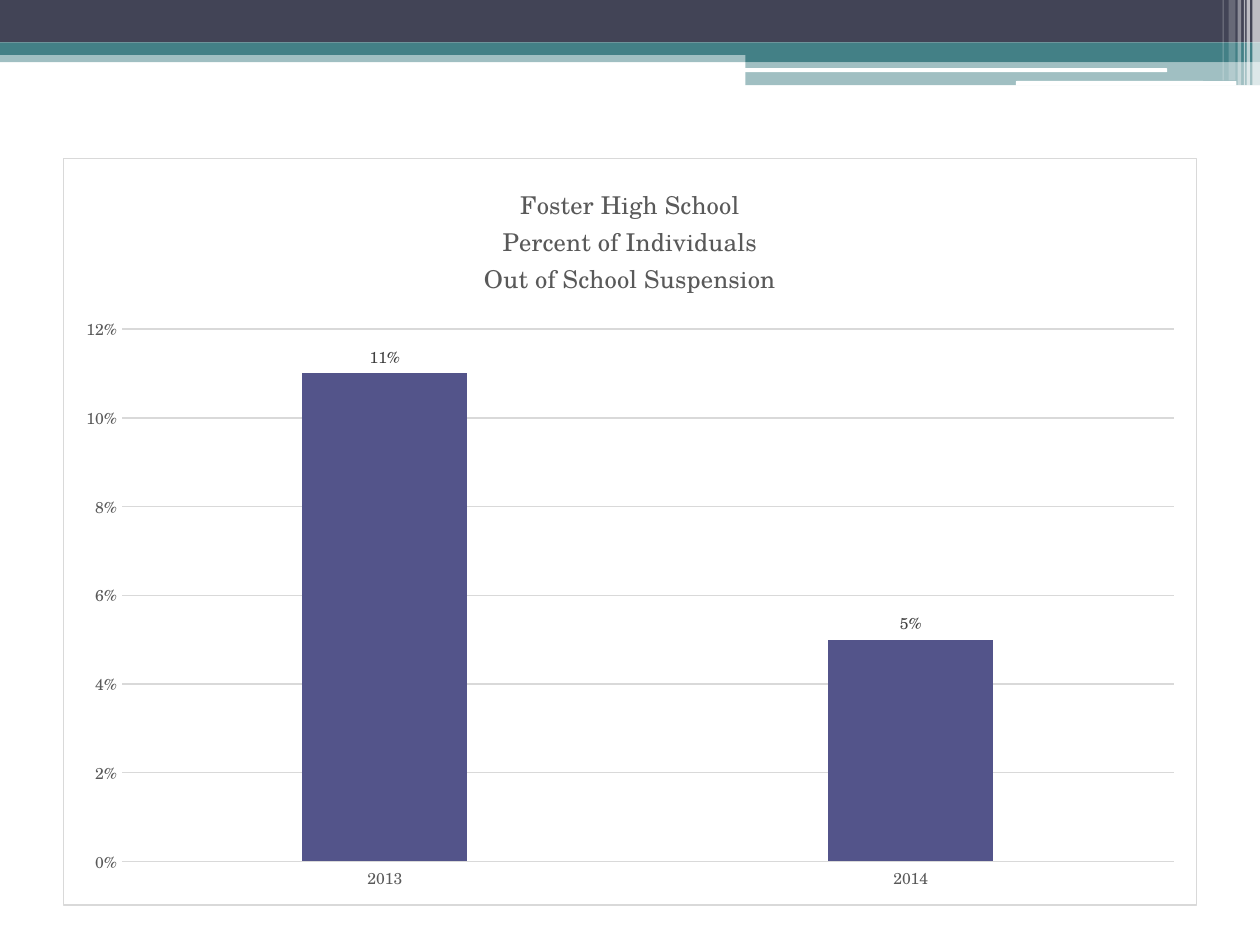
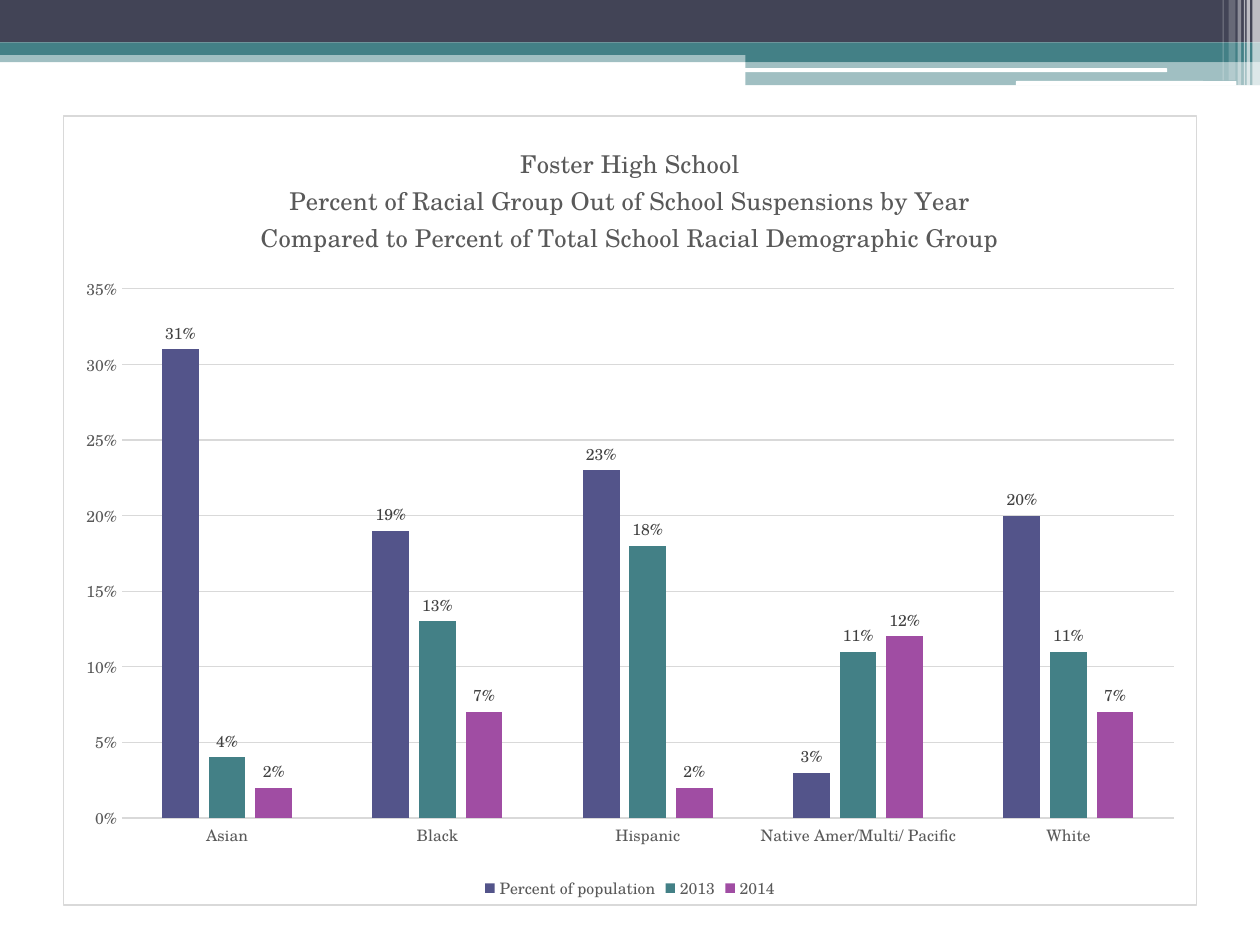
import pptx
import pptx.chart.data
import pptx.dml.color
import pptx.enum.chart
import pptx.enum.shapes
import pptx.oxml
import pptx.oxml.ns
import pptx.util

Pt = pptx.util.Pt
RGBColor = pptx.dml.color.RGBColor
Shape = pptx.enum.shapes.MSO_SHAPE
ChartEnum = pptx.enum.chart

WHITE = RGBColor(0xFF, 0xFF, 0xFF)
SLATE = RGBColor(0x42, 0x44, 0x56)
TEAL = RGBColor(0x43, 0x80, 0x86)
INDIGO = RGBColor(0x53, 0x54, 0x8A)
PURPLE = RGBColor(0xA0, 0x4D, 0xA3)
RULE_GREY = RGBColor(0xD9, 0xD9, 0xD9)
TEXT_GREY = RGBColor(0x59, 0x59, 0x59)
LABEL_GREY = RGBColor(0x40, 0x40, 0x40)
SERIES_COLORS = (INDIGO, TEAL, PURPLE)

FONT = "TeX Gyre Schola"
TITLE_SIZE, TEXT_SIZE = 14, 9
RULE_WIDTH = 0.75
PERCENT = "0%"
PAGE_WIDTH, PAGE_HEIGHT = 720, 540
CHART_LEFT, CHART_WIDTH, CHART_BOTTOM = 36, 648, 517.5
ACCENT_LEFT = 426
ACCENT_WIDTH = PAGE_WIDTH - ACCENT_LEFT

# left, top, width, height, colour, opacity in percent
BANDS = (
    (0, 29, PAGE_WIDTH, 6.5, TEAL, 50),
    (0, 0, PAGE_WIDTH, 24.3, SLATE, 100),
    (0, 24.3, PAGE_WIDTH, 7.1, TEAL, 100),
    (ACCENT_LEFT, 28, ACCENT_WIDTH, 7.4, TEAL, 100),
    (ACCENT_LEFT, 35.4, ACCENT_WIDTH, 13.3, TEAL, 50),
)
# left, top, width, height
HIGHLIGHTS = ((425.5, 39, 241.5, 2.2), (580.5, 46.3, 126, 2.7))
# left, width, height, opacity in percent
STRIPES = (
    (715.7, 4.3, 49, 65),
    (712.3, 2, 49, 65),
    (710.8, 0.7, 49, 60),
    (707.2, 2, 49, 40),
    (702, 4, 46, 20),
    (698.6, 0.7, 46, 30),
)


def add_block(page, left, top, width, height, color, opacity=100, kind=Shape.RECTANGLE):
    block = page.shapes.add_shape(kind, Pt(left), Pt(top), Pt(width), Pt(height))
    block.shadow.inherit = False
    block.fill.solid()
    block.fill.fore_color.rgb = color
    block.line.fill.background()
    if opacity < 100:
        tint = block.fill._xPr.find(".//" + pptx.oxml.ns.qn("a:srgbClr"))
        alpha = pptx.oxml.parse_xml(f'<a:alpha {pptx.oxml.ns.nsdecls("a")} val="{opacity * 1000}"/>')
        tint.append(alpha)


def add_header(page):
    for band in BANDS:
        add_block(page, *band)
    for highlight in HIGHLIGHTS:
        add_block(page, *highlight, WHITE, kind=Shape.ROUNDED_RECTANGLE)
    for left, width, height, opacity in STRIPES:
        add_block(page, left, 0, width, height, WHITE, opacity)


def style_font(font, color, size=TEXT_SIZE):
    font.name = FONT
    font.size = Pt(size)
    font.bold = False
    font.color.rgb = color


def style_rule(line):
    line.color.rgb = RULE_GREY
    line.width = Pt(RULE_WIDTH)


def frame_chart(chart):
    """Give the chart area a white fill and a thin grey border."""
    frame = pptx.oxml.parse_xml(
        f'<c:spPr {pptx.oxml.ns.nsdecls("c", "a")}>'
        f'<a:solidFill><a:srgbClr val="{WHITE}"/></a:solidFill>'
        f'<a:ln w="{Pt(RULE_WIDTH)}"><a:solidFill><a:srgbClr val="{RULE_GREY}"/></a:solidFill></a:ln>'
        "</c:spPr>"
    )
    chart._chartSpace.find(pptx.oxml.ns.qn("c:chart")).addnext(frame)


def write_title(chart, lines):
    chart.has_title = True
    chart.chart_title.include_in_layout = False
    frame = chart.chart_title.text_frame
    for number, text in enumerate(lines):
        para = frame.add_paragraph() if number else frame.paragraphs[0]
        span = para.add_run()
        span.text = text
        style_font(span.font, TEXT_GREY, TITLE_SIZE)


def style_axes(chart, top_value, step):
    for axis in (chart.category_axis, chart.value_axis):
        axis.major_tick_mark = ChartEnum.XL_TICK_MARK.NONE
        axis.minor_tick_mark = ChartEnum.XL_TICK_MARK.NONE
        style_font(axis.tick_labels.font, TEXT_GREY)
    style_rule(chart.category_axis.format.line)
    values = chart.value_axis
    values.minimum_scale = 0
    values.maximum_scale = top_value
    values.major_unit = step
    values.format.line.fill.background()
    values.has_major_gridlines = True
    style_rule(values.major_gridlines.format.line)
    values.tick_labels.number_format = PERCENT
    values.tick_labels.number_format_is_linked = False


def style_columns(plot):
    plot.gap_width = 219
    plot.overlap = -27
    plot.vary_by_categories = False
    for series, color in zip(plot.series, SERIES_COLORS):
        series.format.fill.solid()
        series.format.fill.fore_color.rgb = color
        series.invert_if_negative = False
        labels = series.data_labels
        labels.show_value = True
        labels.position = ChartEnum.XL_LABEL_POSITION.OUTSIDE_END
        labels.number_format = PERCENT
        labels.number_format_is_linked = False
        style_font(labels.font, LABEL_GREY)


def add_legend(chart):
    chart.has_legend = True
    chart.legend.position = ChartEnum.XL_LEGEND_POSITION.BOTTOM
    chart.legend.include_in_layout = False
    style_font(chart.legend.font, TEXT_GREY)


def add_chart_page(deck, chart_top, title_lines, categories, columns, top_value, step):
    page = deck.slides.add_slide(deck.slide_layouts[6])
    add_header(page)
    data = pptx.chart.data.CategoryChartData(number_format=PERCENT)
    data.categories = categories
    for name, values in columns.items():
        data.add_series(name, values)
    chart = page.shapes.add_chart(
        ChartEnum.XL_CHART_TYPE.COLUMN_CLUSTERED,
        Pt(CHART_LEFT), Pt(chart_top), Pt(CHART_WIDTH), Pt(CHART_BOTTOM - chart_top), data,
    ).chart
    chart.font.name = FONT
    chart.font.size = Pt(10)
    frame_chart(chart)
    write_title(chart, title_lines)
    style_axes(chart, top_value, step)
    style_columns(chart.plots[0])
    chart.has_legend = False
    if len(columns) > 1:
        add_legend(chart)


def main():
    deck = pptx.Presentation()
    deck.slide_width, deck.slide_height = Pt(PAGE_WIDTH), Pt(PAGE_HEIGHT)
    add_chart_page(
        deck, 90,
        ("Foster High School", "Percent of Individuals", "Out of School Suspension"),
        ("2013", "2014"),
        {"Series 1": (0.11, 0.05)},
        top_value=0.12, step=0.02,
    )
    add_chart_page(
        deck, 66,
        (
            "Foster High School",
            "Percent of Racial Group Out of School Suspensions by Year",
            "Compared to Percent of Total School Racial Demographic Group",
        ),
        ("Asian", "Black", "Hispanic", "Native Amer/Multi/ Pacific", "White"),
        {
            "Percent of population": (0.31, 0.19, 0.23, 0.03, 0.2),
            "2013": (0.04, 0.13, 0.18, 0.11, 0.11),
            "2014": (0.02, 0.07, 0.02, 0.12, 0.07),
        },
        top_value=0.35, step=0.05,
    )
    deck.save("out.pptx")


if __name__ == "__main__":
    main()
